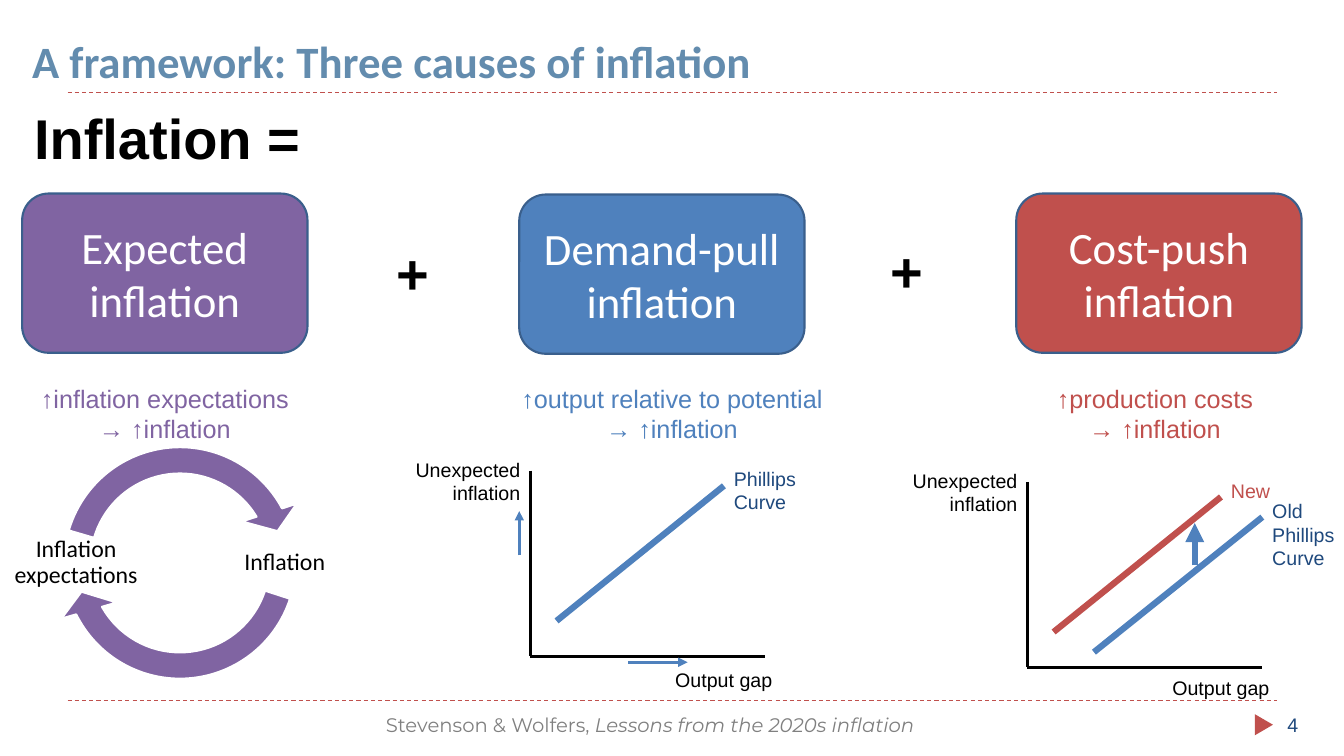
"""Build the slide on three causes of inflation."""
from lxml import etree
from pptx import Presentation
from pptx import util as u
from pptx.dml.color import RGBColor
from pptx.enum import dml, shapes, text
from pptx.oxml import ns

RED = RGBColor(0xC0, 0x50, 0x4D)
BLUE = RGBColor(0x4F, 0x81, 0xBD)
PURPLE = RGBColor(0x80, 0x64, 0xA2)
NAVY = RGBColor(0x1F, 0x49, 0x7D)
STEEL = RGBColor(0x63, 0x8C, 0xAE)
EDGE = RGBColor(0x3A, 0x5F, 0x8C)
GREY = RGBColor(0x80, 0x80, 0x80)
BLACK = RGBColor(0, 0, 0)
WHITE = RGBColor(0xFF, 0xFF, 0xFF)
LEFT, MID, RIGHT = text.PP_ALIGN.LEFT, text.PP_ALIGN.CENTER, text.PP_ALIGN.RIGHT
KIND = shapes.MSO_SHAPE

deck = Presentation()
deck.slide_width, deck.slide_height = u.Inches(13.33), u.Inches(7.5)
slide = deck.slides.add_slide(deck.slide_layouts[6])
tree = slide.shapes


def write(words, box, size, color, align=LEFT, font="Arial", bold=False, shape=None):
    """Write words into a shape, or into a new text box, and return its frame."""
    shape = shape or tree.add_textbox(*map(u.Inches, box))
    frame = shape.text_frame
    frame.word_wrap = True
    para = frame.paragraphs[0]
    para.alignment = align
    for index, line in enumerate(words.split("\n")):
        if index:
            para.add_line_break()
        run = para.add_run()
        run.text = line
        run.font.size, run.font.name = u.Pt(size), font
        run.font.bold, run.font.color.rgb = bold, color
    return frame


def draw(start, end, color, width, dash=False, arrow=False):
    """Draw a straight line, dashed or with an arrowhead if asked."""
    link = tree.add_connector(shapes.MSO_CONNECTOR.STRAIGHT, *map(u.Inches, start + end))
    link.line.color.rgb, link.line.width = color, u.Pt(width)
    if dash:
        link.line.dash_style = dml.MSO_LINE.DASH
    if arrow:
        etree.SubElement(link.line._get_or_add_ln(), ns.qn("a:tailEnd"), type="triangle")
    etree.SubElement(link._element.spPr, ns.qn("a:effectLst"))


for y in (6.95, 0.92):
    draw((0.67, y), (12.67, y), RED, 0.75, dash=True)
mark = tree.add_shape(KIND.ISOSCELES_TRIANGLE, *map(u.Inches, (12.43, 7.1, 0.21, 0.18)))
mark.rotation = 90
mark.shadow.inherit = False
mark.fill.solid()
mark.fill.fore_color.rgb = RED
mark.line.fill.background()

title = write("A framework: Three causes of inflation", (0.22, 0.17, 12.89, 0.75),
              32, STEEL, font="Calibri", bold=True)
title.vertical_anchor = text.MSO_ANCHOR.BOTTOM
foot = write("Stevenson & Wolfers, ", (0.67, 7.02, 11.56, 0.4), 14, GREY, MID, "Montserrat")
book = foot.paragraphs[0].add_run()
book.text = "Lessons from the 2020s inflation"
book.font.size, book.font.name, book.font.italic = u.Pt(14), "Montserrat", True
book.font.color.rgb = GREY
write("4", (12.67, 7.02, 0.67, 0.4), 14, NAVY)

causes = [
    ("Expected inflation", 0.22, 1.92, PURPLE,
     "↑inflation expectations → ↑inflation", 0.22, 2.83),
    ("Demand-pull inflation", 5.15, 1.93, BLUE,
     "↑output relative to potential → ↑inflation", 5, 3.33),
    ("Cost-push inflation", 10.08, 1.92, RED,
     "↑production costs\n→ ↑inflation", 9.79, 3.33),
]
for name, x, y, color, note, left, width in causes:
    card = tree.add_shape(KIND.ROUNDED_RECTANGLE, *map(u.Inches, (x, y, 2.83, 1.58)))
    card.shadow.inherit = False
    card.fill.solid()
    card.fill.fore_color.rgb = color
    card.line.color.rgb, card.line.width = EDGE, u.Pt(1.5)
    frame = write(name, None, 32, WHITE, MID, "Calibri", shape=card)
    frame.vertical_anchor = text.MSO_ANCHOR.MIDDLE
    write(note, (left, 3.75, width, 0.71), 18, color, MID)

write("Inflation =", (0.24, 0.98, 12.68, 0.77), 40, BLACK, bold=True)
for x, y in ((3.42, 2.32), (8.32, 2.3)):
    write("+", (x, y, 1.34, 0.77), 40, BLACK, MID, bold=True)

for x, y, gap, color in ((5.26, 4.67, 6.58, BLUE), (10.19, 4.78, 6.66, RED)):
    base = y + 1.84
    draw((x, y), (x, base), BLACK, 2.25)
    draw((x, base), (x + 2.33, base), BLACK, 2.25)
    draw((x + 0.26, y + 1.49), (x + 1.92, y + 0.15), color, 4.5)
    write("Unexpected inflation", (x - 1.67, y - 0.18, 1.67, 0.57), 14, BLACK, RIGHT)
    write("Output gap", (x + 0.83, gap, 1.67, 0.34), 14, BLACK, RIGHT)

write("Phillips Curve", (7.18, 4.58, 1.07, 0.57), 14, NAVY)
draw((6.23, 6.57), (6.82, 6.57), BLUE, 2.25, arrow=True)
draw((5.15, 5.51), (5.15, 5.07), BLUE, 2.25, arrow=True)

write("New", (12.11, 4.7, 1.07, 0.34), 14, RED)
draw((10.85, 6.47), (12.52, 5.13), BLUE, 4.5)
write("Old Phillips Curve", (12.52, 4.9, 1.07, 0.81), 14, NAVY)
draw((11.85, 5.61), (11.85, 5.19), BLUE, 4.5, arrow=True)

cycle = [
    ("Inflation", (2.19, 5.26, 1.27, 0.64), 91.39, 10.82),
    ("Inflation expectations", (0.12, 5.29, 1.27, 0.58), 198.34, 117.77),
]
for name, box, end, start in cycle:
    frame = write(name, box, 17, BLACK, MID, "Calibri")
    frame.vertical_anchor = text.MSO_ANCHOR.MIDDLE
    frame.margin_left = frame.margin_right = u.Inches(0.02)
    frame.margin_top = frame.margin_bottom = u.Inches(0.02)
    frame.paragraphs[0].line_spacing = 0.9
    loop = tree.add_shape(KIND.CIRCULAR_ARROW, *map(u.Inches, (0.48, 4.28, 2.61, 2.61)))
    loop.shadow.inherit = False
    for index, value in enumerate((0.1, 6.85, end, start, 0.11)):
        loop.adjustments[index] = value
    loop.fill.solid()
    loop.fill.fore_color.rgb = PURPLE
    loop.line.color.rgb, loop.line.width = WHITE, u.Pt(1.5)

deck.save("out.pptx")
